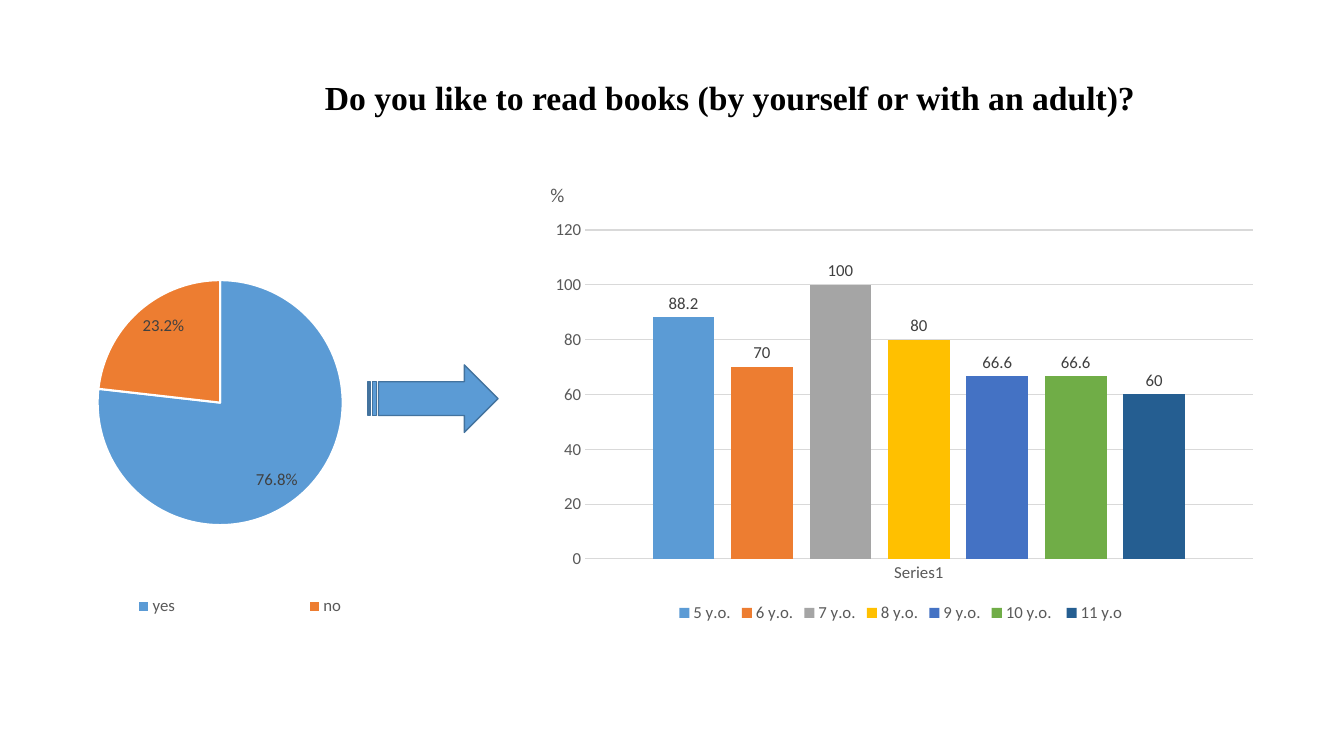
from lxml import etree
from pptx import Presentation
from pptx.chart.data import CategoryChartData
from pptx.dml.color import RGBColor
from pptx.enum.chart import XL_CHART_TYPE, XL_LABEL_POSITION, XL_LEGEND_POSITION, XL_TICK_MARK
from pptx.enum.shapes import MSO_SHAPE
from pptx.enum.text import PP_ALIGN
from pptx.oxml.ns import qn
from pptx.util import Inches, Pt

PIE, COLUMNS = XL_CHART_TYPE.PIE, XL_CHART_TYPE.COLUMN_CLUSTERED
INSIDE_END, OUTSIDE_END = XL_LABEL_POSITION.INSIDE_END, XL_LABEL_POSITION.OUTSIDE_END
LEGEND_BOTTOM = XL_LEGEND_POSITION.BOTTOM
NO_TICKS = XL_TICK_MARK.NONE
STRIPED_ARROW = MSO_SHAPE.STRIPED_RIGHT_ARROW
CENTER = PP_ALIGN.CENTER

COLORS = {
    "title": "000000", "label": "404040", "axis": "595959", "grid": "D9D9D9",
    "separator": "FFFFFF", "arrow_line": "43739E",
    "blue": "5B9BD5", "orange": "ED7D31", "gray": "A5A5A5", "yellow": "FFC000",
    "indigo": "4472C4", "green": "70AD47", "navy": "255E91",
}
ANSWERS = [("yes", 76.8, "blue"), ("no", 23.2, "orange")]
AGES = [
    ("5 y.o.", 88.2, "blue"), ("6 y.o.", 70, "orange"), ("7 y.o.", 100, "gray"),
    ("8 y.o.", 80, "yellow"), ("9 y.o.", 66.6, "indigo"),
    ("10 y.o. ", 66.6, "green"), ("11 y.o", 60, "navy"),
]


def rgb(name):
    return RGBColor.from_string(COLORS[name])


def style_font(font, size, color, name="Calibri", bold=False):
    font.size, font.name, font.bold = Pt(size), name, bold
    font.color.rgb = rgb(color)


def paint(fill, color):
    fill.solid()
    fill.fore_color.rgb = rgb(color)


def draw_line(line, color, width):
    paint(line.fill, color)
    line.width = Pt(width)


def make_layout(x, y, w, h, inner=False):
    """Return a c:layout element with its place in fractions of the chart."""
    layout = etree.Element(qn("c:layout"))
    manual = etree.SubElement(layout, qn("c:manualLayout"))
    settings = [("layoutTarget", "inner")] if inner else []
    settings += [("xMode", "edge"), ("yMode", "edge"), ("x", x), ("y", y), ("w", w), ("h", h)]
    for tag, value in settings:
        etree.SubElement(manual, qn(f"c:{tag}")).set("val", str(value))
    return layout


def drop_layout(parent):
    for layout in parent.findall(qn("c:layout")):
        parent.remove(layout)


def add_plain_chart(slide, box, kind, data, plot_place):
    """Add a chart with a bottom legend and a fixed plot area."""
    chart = slide.shapes.add_chart(kind, *map(Inches, box), data).chart
    style_font(chart.font, 10, "title")
    chart.has_title = False
    chart.has_legend = True
    chart.legend.position = LEGEND_BOTTOM
    chart.legend.include_in_layout = False
    style_font(chart.legend.font, 12, "axis")
    plot_area = chart.element.find(".//" + qn("c:plotArea"))
    drop_layout(plot_area)
    plot_area.insert(0, make_layout(*plot_place, inner=True))
    return chart


def label_values(plot, position, number_format):
    plot.has_data_labels = True
    labels = plot.data_labels
    labels.show_value = True
    labels.position = position
    labels.number_format, labels.number_format_is_linked = number_format, False
    style_font(labels.font, 12, "label")


def add_answer_pie(slide, box):
    data = CategoryChartData()
    data.categories = [answer for answer, _, _ in ANSWERS]
    data.add_series("Series 1", [share for _, share, _ in ANSWERS])
    chart = add_plain_chart(slide, box, PIE, data, (0.264, 0.174, 0.493, 0.572))
    legend = chart.legend._element
    drop_layout(legend)
    legend.find(qn("c:legendPos")).addnext(make_layout(0.14, 0.89, 0.81, 0.09))
    plot = chart.plots[0]
    plot.vary_by_categories = True
    label_values(plot, INSIDE_END, '0.0"%"')
    for index, (_, _, color) in enumerate(ANSWERS):
        piece = plot.series[0].points[index].format
        paint(piece.fill, color)
        draw_line(piece.line, "separator", 1.5)


def add_age_columns(slide, box):
    data = CategoryChartData()
    data.categories = ["Series1"]
    for age, share, _ in AGES:
        data.add_series(age, [share])
    chart = add_plain_chart(slide, box, COLUMNS, data, (0.062, 0.042, 0.926, 0.794))
    plot = chart.plots[0]
    plot.vary_by_categories = False
    plot.gap_width, plot.overlap = 219, -27
    label_values(plot, OUTSIDE_END, "General")
    for series, (_, _, color) in zip(plot.series, AGES):
        paint(series.format.fill, color)
    for axis in (chart.category_axis, chart.value_axis):
        axis.major_tick_mark = axis.minor_tick_mark = NO_TICKS
        style_font(axis.tick_labels.font, 12, "axis")
    draw_line(chart.category_axis.format.line, "grid", 0.75)
    shares = chart.value_axis
    shares.minimum_scale, shares.maximum_scale, shares.major_unit = 0, 120, 20
    shares.format.line.fill.background()
    shares.has_major_gridlines = True
    draw_line(shares.major_gridlines.format.line, "grid", 0.75)


def add_text(slide, box, text, indent=0.1):
    frame = slide.shapes.add_textbox(*map(Inches, box)).text_frame
    frame.word_wrap = True
    frame.margin_left = Inches(indent)
    paragraph = frame.paragraphs[0]
    paragraph.text = text
    return paragraph


def add_title(slide, box):
    question = add_text(slide, box, "Do you like to read books (by yourself or with an adult)?", 1.16)
    question.alignment = CENTER
    style_font(question.font, 24, "title", "Times New Roman", True)


def add_unit(slide, box):
    style_font(add_text(slide, box, "%").font, 14, "axis")


def add_arrow(slide, box):
    arrow = slide.shapes.add_shape(STRIPED_ARROW, *map(Inches, box))
    arrow.shadow.inherit = False
    paint(arrow.fill, "blue")
    draw_line(arrow.line, "arrow_line", 1)


def main():
    deck = Presentation()
    deck.slide_width, deck.slide_height = Inches(13.33), Inches(7.5)
    slide = deck.slides.add_slide(deck.slide_layouts[6])
    add_title(slide, (1.98, 0.71, 9.46, 0.5))
    add_answer_pie(slide, (-0.69, 2.04, 5.63, 4.25))
    add_age_columns(slide, (5.36, 2.11, 7.15, 4.11))
    add_unit(slide, (5.36, 1.77, 0.43, 0.34))
    add_arrow(slide, (3.65, 3.62, 1.29, 0.67))
    deck.save("out.pptx")


if __name__ == "__main__":
    main()
